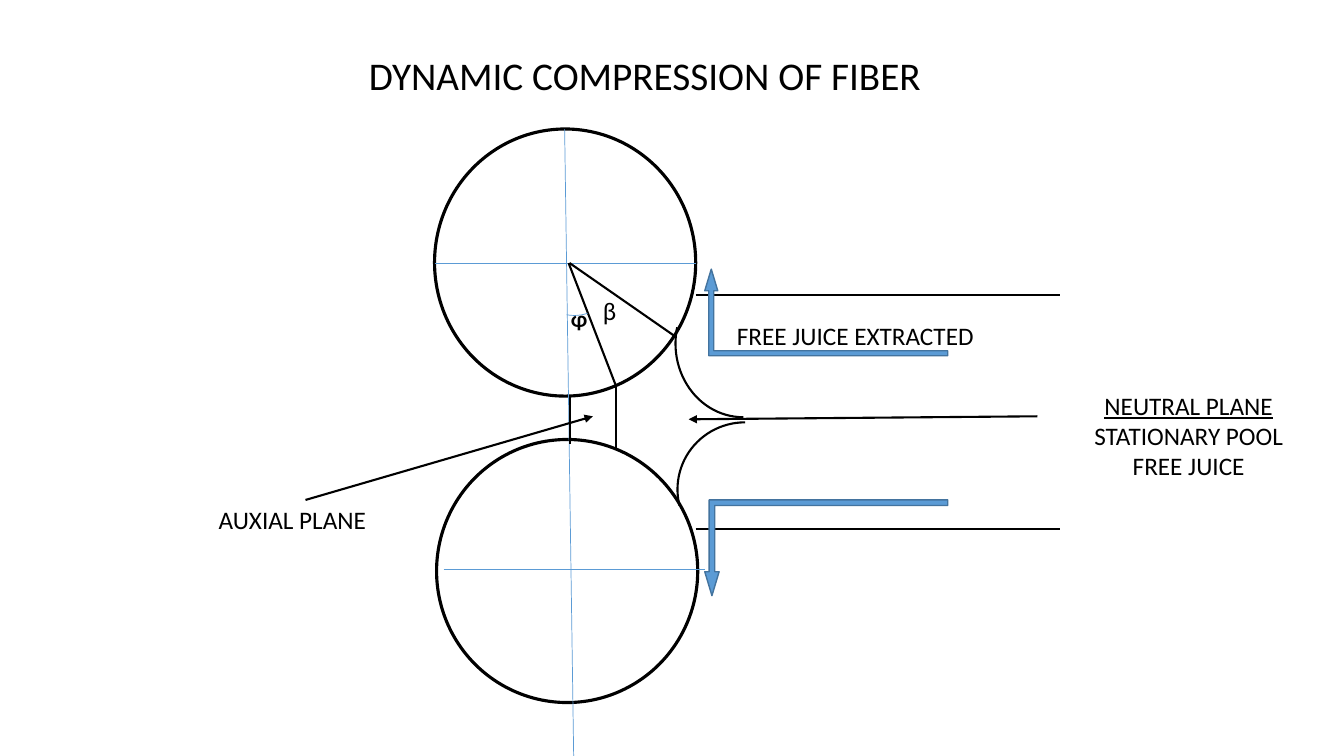
from dataclasses import dataclass
from lxml.etree import SubElement
from pptx import Presentation
from pptx.dml.color import RGBColor
from pptx.enum.shapes import MSO_CONNECTOR, MSO_SHAPE
from pptx.enum.text import MSO_AUTO_SIZE, PP_ALIGN
from pptx.oxml.ns import qn
from pptx.util import Inches, Pt


@dataclass(frozen=True)
class Theme:
    font: str = "Calibri"
    ink: RGBColor = RGBColor(0x00, 0x00, 0x00)
    blue: RGBColor = RGBColor(0x5B, 0x9B, 0xD5)
    edge: RGBColor = RGBColor(0x43, 0x73, 0x9E)
    title: int = 28
    body: int = 18
    sign: int = 32
    thin: float = 0.5
    rim: float = 1
    line: float = 1.5
    bold: float = 2.25


@dataclass(frozen=True)
class Box:
    left: float
    top: float
    width: float
    height: float

    def inner(self, x, y, width, height):
        return Box(self.left + x, self.top + y, width, height)

    def point(self, x, y):
        return Inches(self.left + x), Inches(self.top + y)

    def frame(self):
        return [Inches(n) for n in (self.left, self.top, self.width, self.height)]


theme = Theme()


def add_form(slide, kind, box, color, width, fill=None, flip="", adjust=()):
    form = slide.shapes.add_shape(kind, *box.frame())
    form.shadow.inherit = False
    if fill is None:
        form.fill.background()
    else:
        form.fill.solid()
        form.fill.fore_color.rgb = fill
    form.line.color.rgb = color
    form.line.width = Pt(width)
    for index, value in enumerate(adjust):
        form.adjustments[index] = value
    for axis in flip:
        form._element.spPr.get_or_add_xfrm().set("flip" + axis, "1")


def add_line(slide, start, end, color=theme.ink, width=theme.line, arrow=False):
    line = slide.shapes.add_connector(MSO_CONNECTOR.STRAIGHT, *start, *end)
    line.line.color.rgb = color
    line.line.width = Pt(width)
    if arrow:
        SubElement(line.line._get_or_add_ln(), qn("a:tailEnd"), type="triangle")
    SubElement(line._element.spPr, qn("a:effectLst"))


def add_label(slide, box, *lines, size=theme.body, align=PP_ALIGN.LEFT, under=False):
    frame = slide.shapes.add_textbox(*box.frame()).text_frame
    frame.word_wrap = True
    frame.auto_size = MSO_AUTO_SIZE.SHAPE_TO_FIT_TEXT
    for index, text in enumerate(lines):
        para = frame.add_paragraph() if index else frame.paragraphs[0]
        para.alignment = align
        run = para.add_run()
        run.text = text
        run.font.name = theme.font
        run.font.size = Pt(size)
        run.font.color.rgb = theme.ink
        run.font.underline = under and index == 0


def draw_rolls(slide, box):
    for x, y, height in ((0, 0, 2.65), (0.02, 3.08, 2.61)):
        roll = box.inner(x, y, 2.59, height)
        add_form(slide, MSO_SHAPE.FLOWCHART_CONNECTOR, roll, theme.ink, theme.bold)
    for start, end in (
        ((1.29, 0), (1.38, box.height)),
        ((0, 1.33), (2.59, 1.33)),
        ((0.09, 4.37), (2.68, 4.37)),
    ):
        add_line(slide, box.point(*start), box.point(*end), theme.blue, theme.thin)


def draw_angles(slide, box):
    for start, end in (
        ((0, 0), (0.47, 1.22)),
        ((0.01, 0), (1.06, 0.73)),
        ((0.47, 1.22), (0.47, 1.83)),
        ((0.01, 1.33), (0.01, 1.79)),
    ):
        add_line(slide, box.point(*start), box.point(*end))
    sweep = box.inner(-0.25, 0.09, 0.61, 0.43)
    add_form(slide, MSO_SHAPE.ARC, sweep, theme.blue, theme.thin,
             flip="H", adjust=(42.08, 74.75))
    add_label(slide, box.inner(-0.09, 0.1, 0.99, 0.64), "ᵩ", size=theme.sign)
    add_label(slide, box.inner(0.24, 0.27, 1.05, 0.4), "β")


def draw_feed(slide, box):
    for y in (0.26, 2.58):
        add_line(slide, box.point(0.2, y), box.point(box.width, y))
    for y, height, flip in ((0, 0.86, "H"), (2.29, 0.95, "HV")):
        add_form(slide, MSO_SHAPE.BENT_UP_ARROW, box.inner(0.29, y, 2.41, height),
                 theme.edge, theme.rim, theme.blue, flip, (0.058, 0.075, 0.25))
    for x, y, height, flip in ((0, 0.01, 1.46, ""), (0.02, 1.52, 1.33, "V")):
        add_form(slide, MSO_SHAPE.ARC, box.inner(x, y, 1.34, height),
                 theme.ink, theme.line, flip=flip, adjust=(53.9, 116.36))
    add_label(slide, box.inner(0.51, 0.46, 2.67, 0.4), "FREE JUICE EXTRACTED")


def draw_neutral(slide, box):
    add_line(slide, box.point(3.46, 0.31), box.point(0, 0.34), arrow=True)
    add_label(slide, box.inner(3.68, 0, 2.56, box.height), "NEUTRAL PLANE",
              "STATIONARY POOL FREE JUICE", align=PP_ALIGN.CENTER, under=True)


def draw_axial(slide, box):
    add_line(slide, box.point(0.96, 0.83), box.point(box.width, 0), arrow=True)
    add_label(slide, box.inner(0, 0.82, 1.86, 0.4), "AUXIAL PLANE")


def main():
    deck = Presentation()
    deck.slide_width, deck.slide_height = Inches(13.33), Inches(7.5)
    slide = deck.slides.add_slide(deck.slide_layouts[6])
    draw_rolls(slide, Box(4.31, 1.28, 2.68, 6.22))
    draw_angles(slide, Box(5.64, 2.61, 1.06, 1.83))
    draw_feed(slide, Box(6.7, 2.67, 3.81, 3.24))
    draw_neutral(slide, Box(6.83, 3.82, 6.24, 1.01))
    draw_axial(slide, Box(2.07, 4.13, 3.81, 1.22))
    add_label(slide, Box(3.56, 0.46, 5.96, 0.57),
              "DYNAMIC COMPRESSION OF FIBER", size=theme.title)
    deck.save("out.pptx")


if __name__ == "__main__":
    main()
